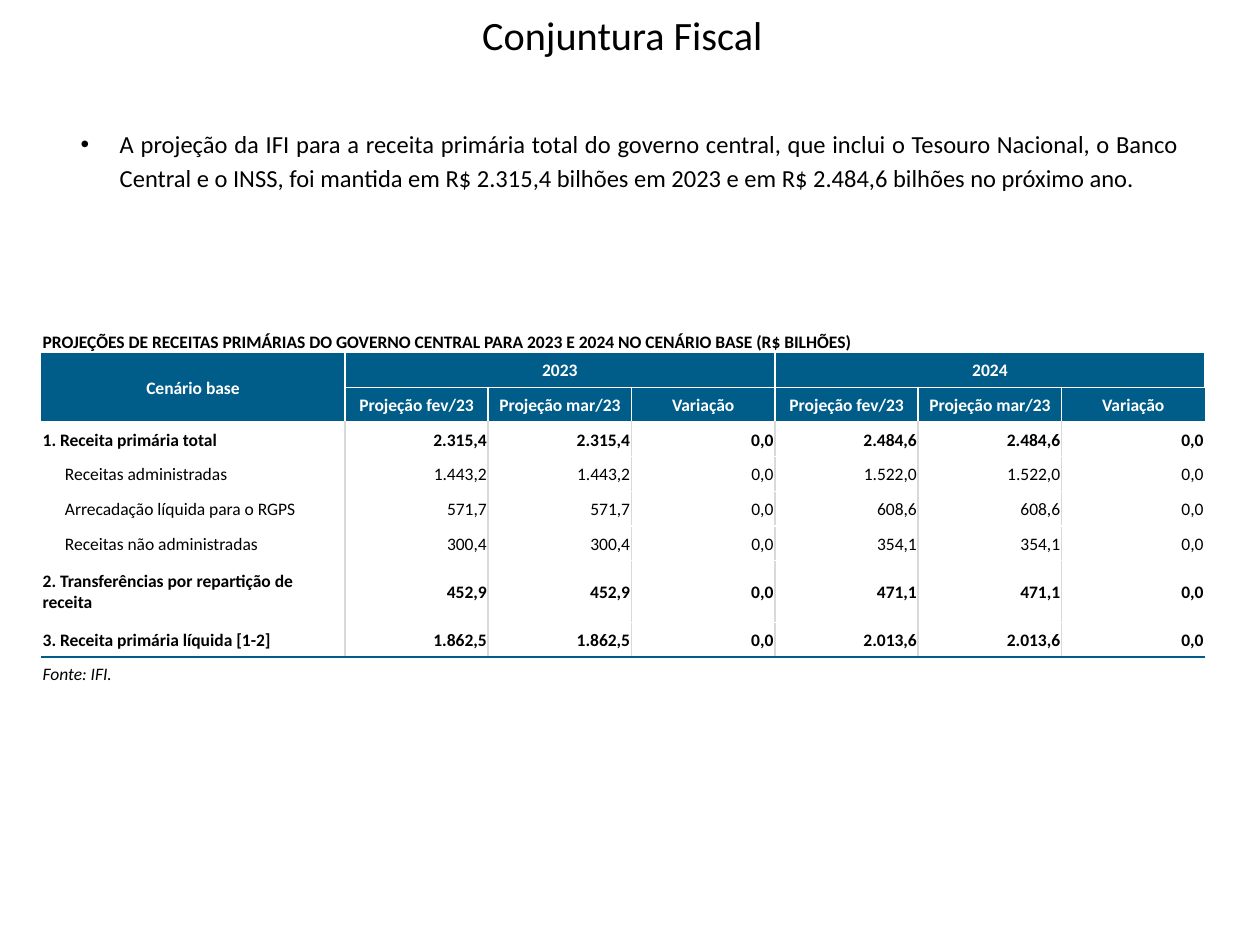
from lxml import etree
from pptx import Presentation
from pptx.dml.color import RGBColor
from pptx.enum.text import MSO_ANCHOR, MSO_AUTO_SIZE, PP_ALIGN
from pptx.oxml.ns import qn
from pptx.util import Cm, Pt

LEFT, CENTER, RIGHT, JUSTIFY = (PP_ALIGN.LEFT, PP_ALIGN.CENTER,
                                PP_ALIGN.RIGHT, PP_ALIGN.JUSTIFY)
TOP, MIDDLE, BOTTOM = MSO_ANCHOR.TOP, MSO_ANCHOR.MIDDLE, MSO_ANCHOR.BOTTOM
NO_AUTOFIT = MSO_AUTO_SIZE.NONE

COLORS = {"black": "000000", "white": "FFFFFF", "blue": "005D89", "grey": "D9D9D9"}
FONT = "Calibri"

INTRO = ("A projeção da IFI para a receita primária total do governo central, "
         "que inclui o Tesouro Nacional, o Banco Central e o INSS, foi mantida em "
         "R$ 2.315,4 bilhões em 2023 e em R$ 2.484,6 bilhões no próximo ano.")
TABLE_TITLE = ("PROJEÇÕES DE RECEITAS PRIMÁRIAS DO GOVERNO CENTRAL PARA 2023 E 2024 "
               "NO CENÁRIO BASE (R$ BILHÕES)")
YEARS = ["2023", "2024"]
MEASURES = ["Projeção fev/23", "Projeção mar/23", "Variação"]
# label, projection for 2023, projection for 2024, is main line
REVENUES = [
    ("1. Receita primária total", "2.315,4", "2.484,6", True),
    ("Receitas administradas", "1.443,2", "1.522,0", False),
    ("Arrecadação líquida para o RGPS", "571,7", "608,6", False),
    ("Receitas não administradas", "300,4", "354,1", False),
    ("2. Transferências por repartição de receita", "452,9", "471,1", True),
    ("3. Receita primária líquida [1-2]", "1.862,5", "2.013,6", True),
]
CHANGE = "0,0"

COL_WIDTHS = [6.12] + [2.89] * 6
ROW_HEIGHTS = [0.66] + [0.7] * 6 + [1.24] + [0.7] * 2
LAST_COL = len(COL_WIDTHS) - 1
FIRST_DATA_ROW = 3
SOURCE_ROW = len(ROW_HEIGHTS) - 1
LAST_DATA_ROW = SOURCE_ROW - 1


def apply(obj, values):
    for name, value in values.items():
        setattr(obj, name, value)


def rgb(color):
    return RGBColor.from_string(COLORS[color])


def write(p, text, size, color="black", align=LEFT, **font):
    p.alignment = align
    r = p.add_run()
    r.text = text
    apply(r.font, {"name": FONT, "size": Pt(size), **font})
    r.font.color.rgb = rgb(color)


def fill_placeholder(sp, box, anchor):
    """Place a placeholder and return its first paragraph."""
    apply(sp, dict(zip(("left", "top", "width", "height"), map(Cm, box))))
    tf = sp.text_frame
    apply(tf, {"word_wrap": True, "auto_size": NO_AUTOFIT, "vertical_anchor": anchor})
    return tf.paragraphs[0]


def add_title(s):
    p = fill_placeholder(s.shapes.title, (7.52, 0, 10.06, 1.5), MIDDLE)
    p.line_spacing = 0.9
    write(p, "Conjuntura Fiscal", 23, align=CENTER)


def add_intro(s):
    p = fill_placeholder(s.placeholders[1], (1.37, 2.39, 22.66, 2.49), TOP)
    pPr = p._p.get_or_add_pPr()
    pPr.set("marL", str(Cm(0.79)))
    pPr.set("indent", str(-Cm(0.79)))
    etree.SubElement(pPr, qn("a:buFont"), typeface="Arial")
    etree.SubElement(pPr, qn("a:buChar"), char="•")
    apply(p, {"line_spacing": 1.15, "space_before": Pt(0), "space_after": Pt(6)})
    write(p, INTRO, 14, align=JUSTIFY)


def cell_borders(row, col):
    """Map each drawn side of a cell to its colour and width."""
    if row == 0:
        return {}
    if row == SOURCE_ROW:
        return {"T": ("blue", 1.5)}
    header = row < FIRST_DATA_ROW
    line = ("white" if header else "grey", 1)
    white = ("white", 1)
    crossed = header or col in (3, 6)
    sides = {}
    if col > 0:
        sides["L"] = line
    if col < LAST_COL:
        sides["R"] = line
    if row > 1 and (crossed or row == FIRST_DATA_ROW):
        sides["T"] = white
    if row == LAST_DATA_ROW:
        sides["B"] = ("blue", 1.5)
    elif crossed:
        sides["B"] = white
    return sides


def draw_borders(cell, sides):
    tcPr = cell._tc.get_or_add_tcPr()
    for side in "LRTB":
        ln = etree.SubElement(tcPr, qn("a:ln" + side))
        if side not in sides:
            etree.SubElement(ln, qn("a:noFill"))
            continue
        color, width = sides[side]
        ln.set("w", str(Pt(width)))
        fill = etree.SubElement(ln, qn("a:solidFill"))
        etree.SubElement(fill, qn("a:srgbClr"), val=COLORS[color])


def format_cell(cell, row, col):
    apply(cell, {"margin_left": Cm(0.03), "margin_right": Cm(0.03),
                 "margin_top": Cm(0.03), "margin_bottom": 0,
                 "vertical_anchor": MIDDLE})
    draw_borders(cell, cell_borders(row, col))
    cell.fill.solid()
    cell.fill.fore_color.rgb = rgb("blue" if 0 < row < FIRST_DATA_ROW else "white")


def shrink_empty(cell):
    """Keep an empty cell from stretching its row."""
    if not cell.text_frame.text:
        etree.SubElement(cell.text_frame.paragraphs[0]._p, qn("a:endParaRPr"), sz="1000")


def write_cell(cell, text, **fmt):
    write(cell.text_frame.paragraphs[0], text, 10, **fmt)


def write_header(table):
    title = table.cell(0, 0)
    title.merge(table.cell(0, LAST_COL))
    title.vertical_anchor = BOTTOM
    write_cell(title, TABLE_TITLE, bold=True)

    head = {"color": "white", "align": CENTER, "bold": True}
    table.cell(1, 0).merge(table.cell(2, 0))
    write_cell(table.cell(1, 0), "Cenário base", **head)
    for i, year in enumerate(YEARS):
        col = 1 + i * len(MEASURES)
        table.cell(1, col).merge(table.cell(1, col + len(MEASURES) - 1))
        write_cell(table.cell(1, col), year, **head)
        for j, measure in enumerate(MEASURES):
            write_cell(table.cell(2, col + j), measure, **head)


def write_revenues(table):
    for row, (label, y2023, y2024, main_line) in enumerate(REVENUES, FIRST_DATA_ROW):
        write_cell(table.cell(row, 0), label, bold=main_line)
        if not main_line:
            table.cell(row, 0).margin_left = Cm(0.48)
        values = [y2023, y2023, CHANGE, y2024, y2024, CHANGE]
        for col, value in enumerate(values, 1):
            write_cell(table.cell(row, col), value, align=RIGHT, bold=main_line)
    write_cell(table.cell(SOURCE_ROW, 0), "Fonte: IFI.", align=JUSTIFY, italic=True)


def add_projection_table(s):
    table = s.shapes.add_table(len(ROW_HEIGHTS), len(COL_WIDTHS), Cm(0.83), Cm(6.45),
                               Cm(sum(COL_WIDTHS)), Cm(sum(ROW_HEIGHTS))).table
    apply(table, {"first_row": False, "horz_banding": False})
    for column, width in zip(table.columns, COL_WIDTHS):
        column.width = Cm(width)
    for i, (row, height) in enumerate(zip(table.rows, ROW_HEIGHTS)):
        row.height = Cm(height)
        for j, cell in enumerate(row.cells):
            format_cell(cell, i, j)
    write_header(table)
    write_revenues(table)
    for cell in table.iter_cells():
        shrink_empty(cell)


def main():
    prs = Presentation()
    apply(prs, {"slide_width": Cm(25.4), "slide_height": Cm(19.05)})
    s = prs.slides.add_slide(prs.slide_layouts[1])
    add_title(s)
    add_intro(s)
    add_projection_table(s)
    prs.save("out.pptx")


if __name__ == "__main__":
    main()
